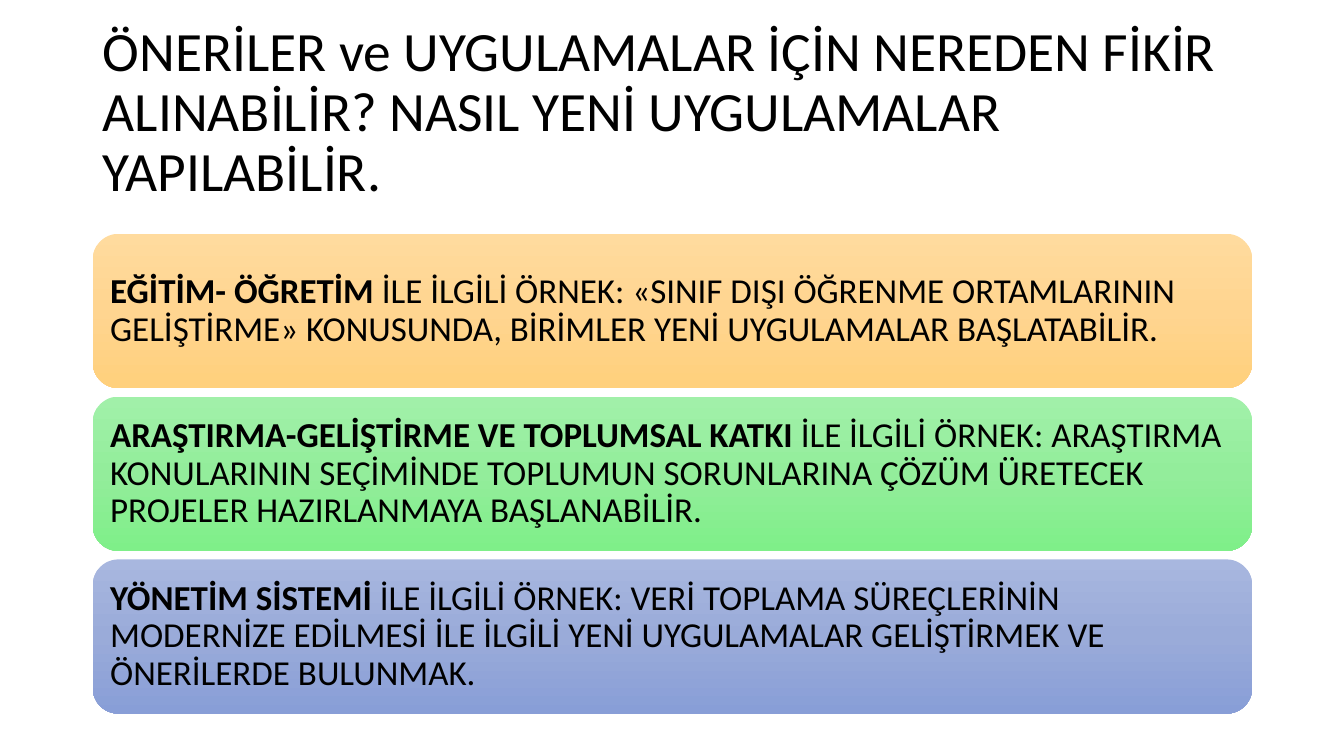
from copy import deepcopy

from pptx import Presentation
from pptx.dml.color import RGBColor
from pptx.enum.shapes import MSO_SHAPE
from pptx.enum.text import MSO_ANCHOR, MSO_AUTO_SIZE, PP_ALIGN
from pptx.oxml.ns import qn
from pptx.util import Inches, Pt

ROUNDED = MSO_SHAPE.ROUNDED_RECTANGLE
MIDDLE = MSO_ANCHOR.MIDDLE
NO_FIT = MSO_AUTO_SIZE.NONE
LEFT = PP_ALIGN.LEFT

TITLE = ("ÖNERİLER ve UYGULAMALAR İÇİN NEREDEN FİKİR ALINABİLİR? "
         "NASIL YENİ UYGULAMALAR YAPILABİLİR.")
CARDS = [
    ("EĞİTİM- ÖĞRETİM",
     " İLE İLGİLİ ÖRNEK: «SINIF DIŞI ÖĞRENME ORTAMLARININ GELİŞTİRME» "
     "KONUSUNDA, BİRİMLER YENİ UYGULAMALAR BAŞLATABİLİR.",
     ("FFDB9E", "FFD590", "FFD07C")),
    ("ARAŞTIRMA-GELİŞTİRME VE TOPLUMSAL KATKI ",
     "İLE İLGİLİ ÖRNEK: ARAŞTIRMA KONULARININ SEÇİMİNDE TOPLUMUN SORUNLARINA "
     "ÇÖZÜM ÜRETECEK PROJELER HAZIRLANMAYA BAŞLANABİLİR.",
     ("A1F0A9", "93ED9B", "7FEF89")),
    ("YÖNETİM SİSTEMİ",
     " İLE İLGİLİ ÖRNEK: VERİ TOPLAMA SÜREÇLERİNİN MODERNİZE EDİLMESİ İLE "
     "İLGİLİ YENİ UYGULAMALAR GELİŞTİRMEK VE ÖNERİLERDE BULUNMAK.",
     ("A8B7DF", "9AABD9", "889ED7")),
]

FONT, INK = "Calibri", "000000"
PAGE_WIDTH, PAGE_HEIGHT = 13.33, 7.5
MARGIN = 0.92
CONTENT_WIDTH = 11.5
TITLE_TOP, TITLE_HEIGHT = 0.4, 1.45
CARDS_TOP, CARD_HEIGHT, CARD_GAP = 2.32, 1.53, 0.085
INSET = 0.1


def color(code):
    """Turn a hex string into a colour."""
    return RGBColor.from_string(code)


def write(shape, size, spans):
    """Fill a shape with one left-aligned paragraph of (text, bold) spans."""
    frame = shape.text_frame
    frame.word_wrap = True
    frame.auto_size = NO_FIT
    frame.vertical_anchor = MIDDLE
    frame.margin_left = frame.margin_right = Inches(INSET)
    frame.margin_top = frame.margin_bottom = Inches(INSET / 2)
    para = frame.paragraphs[0]
    para.alignment = LEFT
    para.line_spacing = 0.9
    for text, bold in spans:
        span = para.add_run()
        span.text = text
        span.font.name = FONT
        span.font.size = Pt(size)
        span.font.bold = bold
        span.font.color.rgb = color(INK)


def shade(shape, codes):
    """Give a shape a top-to-bottom gradient with evenly spaced stops."""
    shape.fill.gradient()
    shape.fill.gradient_angle = 270
    stop_list = shape._element.spPr.find(qn("a:gradFill")).find(qn("a:gsLst"))
    while len(stop_list) < len(codes):
        stop_list.append(deepcopy(stop_list[0]))
    for index, (stop, code) in enumerate(zip(shape.fill.gradient_stops, codes)):
        stop.position = index / (len(codes) - 1)
        stop.color.rgb = color(code)


def add_card(page, row, heading, body, codes):
    """Add one rounded card in the given row."""
    top = CARDS_TOP + row * (CARD_HEIGHT + CARD_GAP)
    box = page.shapes.add_shape(ROUNDED, Inches(MARGIN), Inches(top),
                                Inches(CONTENT_WIDTH), Inches(CARD_HEIGHT))
    box.shadow.inherit = False
    box.line.fill.background()
    shade(box, codes)
    write(box, 25, [(heading, True), (body, False)])


def main():
    """Build the slide and save it."""
    deck = Presentation()
    deck.slide_width, deck.slide_height = Inches(PAGE_WIDTH), Inches(PAGE_HEIGHT)
    page = deck.slides.add_slide(deck.slide_layouts[5])
    title = page.shapes.title
    title.left, title.top = Inches(MARGIN), Inches(TITLE_TOP)
    title.width, title.height = Inches(CONTENT_WIDTH), Inches(TITLE_HEIGHT)
    write(title, 39.6, [(TITLE, False)])
    for row, card in enumerate(CARDS):
        add_card(page, row, *card)
    deck.save("out.pptx")


if __name__ == "__main__":
    main()
